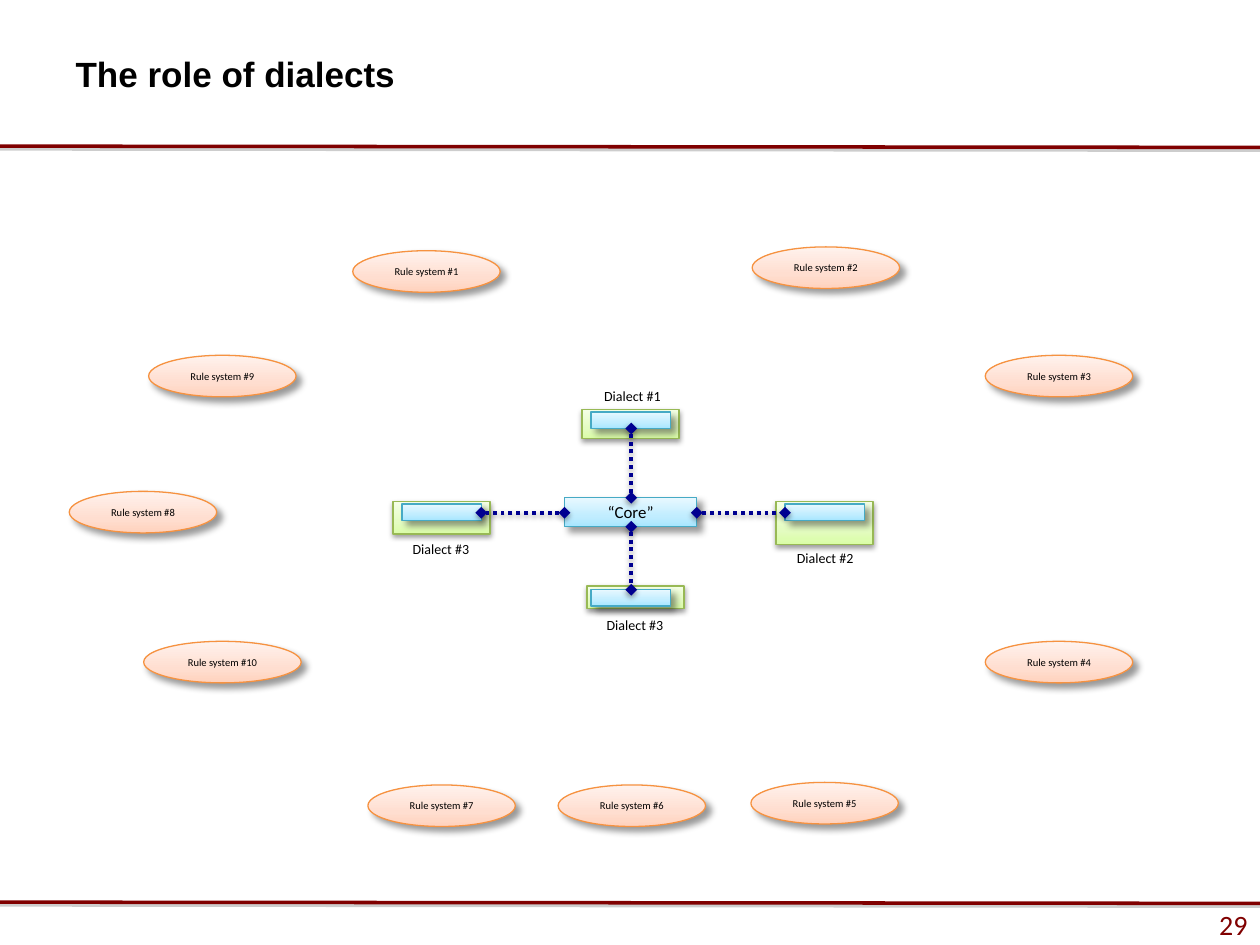
from copy import deepcopy
from dataclasses import dataclass

from lxml.etree import SubElement
from pptx import Presentation
from pptx.dml.color import RGBColor as RGB
from pptx.enum.dml import MSO_LINE
from pptx.enum.shapes import MSO_CONNECTOR as CONNECTOR, MSO_SHAPE as SHAPE
from pptx.enum.text import MSO_ANCHOR as ANCHOR, MSO_AUTO_SIZE as AUTO_SIZE, PP_ALIGN as ALIGN
from pptx.oxml.ns import qn
from pptx.util import Inches, Pt


@dataclass(frozen=True)
class Paint:
    stops: tuple
    outline: str
    shadow: tuple


@dataclass(frozen=True)
class Theme:
    heading_font: str = "Arial"
    body_font: str = "Calibri"
    black: str = "000000"
    white: str = "FFFFFF"
    rule: str = "800000"
    arrow: str = "000090"
    title_size: float = 20
    number_size: float = 16
    core_size: float = 9.6
    dialect_size: float = 8
    system_size: float = 6
    deep_shadow: tuple = ("000000", 40, 4, 4, 45)
    soft_shadow: tuple = ("000000", 38, 3.1, 1.6, 90)
    rule_shadow: tuple = ("808080", 38, 0, 1.6, 90)
    core: Paint = Paint(("A7E6FF", "C1EDFF", "E7F8FF"), "46AAC5", deep_shadow)
    dialect: Paint = Paint(("DAFDA7", "E4FCC2", "F5FFE7"), "98B955", soft_shadow)
    system: Paint = Paint(("FFD2BD", "FFDED0", "FFF2ED"), "F69240", deep_shadow)


THEME = Theme()
STOP_POSITIONS = (0, 0.35, 1)

CORE_BOX = (4.48, 3.95, 1.05, 0.23)
DIALECT_WIDTH = 0.77
INNER_SIZE = (0.63, 0.13)
LABEL_SIZE = (0.7, 0.23)
SYSTEM_HEIGHT = 0.33

DIALECTS = [
    ("Dialect #3", (4.66, 4.65), 0.18, (4.69, 4.68), (4.69, 4.84)),
    ("Dialect #2", (6.16, 3.98), 0.34, (6.23, 4), (6.2, 4.31)),
    ("Dialect #1", (4.62, 3.25), 0.23, (4.69, 3.27), (4.67, 3.03)),
    ("Dialect #3", (3.12, 3.98), 0.26, (3.19, 4), (3.15, 4.24)),
]
LINKS = [
    (5.53, 4.07, 6.23, 4.07),
    (5.01, 3.95, 5.01, 3.4),
    (5.01, 4.18, 5.01, 4.68),
    (4.48, 4.07, 3.82, 4.07),
]
RULE_SYSTEMS = [
    (1, 2.8, 1.99, 1.17),
    (2, 5.97, 1.96, 1.17),
    (3, 7.82, 2.82, 1.17),
    (4, 7.82, 5.09, 1.17),
    (5, 5.96, 6.21, 1.17),
    (6, 4.43, 6.23, 1.17),
    (7, 2.92, 6.23, 1.17),
    (8, 0.55, 3.9, 1.17),
    (9, 1.18, 2.82, 1.17),
    (10, 1.14, 5.09, 1.25),
]


def inches(values):
    return [Inches(value) for value in values]


def add_shadow(shape, shadow):
    color, alpha, blur, distance, angle = shadow
    effects = SubElement(shape.element.spPr, qn("a:effectLst"))
    outer = SubElement(effects, qn("a:outerShdw"), blurRad=str(Pt(blur)), dist=str(Pt(distance)),
                       dir=str(angle * 60000), rotWithShape="0")
    tint = SubElement(outer, qn("a:srgbClr"), val=color)
    SubElement(tint, qn("a:alpha"), val=str(alpha * 1000))


def write_text(shape, text, size, color=THEME.black, font=THEME.body_font,
               align=ALIGN.CENTER, bold=False):
    paragraph = shape.text_frame.paragraphs[0]
    paragraph.alignment = align
    run = paragraph.add_run()
    run.text = text
    run.font.name = font
    run.font.size = Pt(size)
    run.font.bold = bold
    run.font.color.rgb = RGB.from_string(color)


def add_painted(slide, kind, box, paint, text=None, size=None):
    shape = slide.shapes.add_shape(kind, *inches(box))
    shape.fill.gradient()
    shape.fill.gradient_angle = 90
    stop_list = shape.element.spPr.find(".//" + qn("a:gsLst"))
    stop_list.insert(1, deepcopy(stop_list[0]))
    for stop, position, color in zip(shape.fill.gradient_stops, STOP_POSITIONS, paint.stops):
        stop.position = position
        stop.color.rgb = RGB.from_string(color)
    shape.line.color.rgb = RGB.from_string(paint.outline)
    shape.line.width = Pt(0.75)
    add_shadow(shape, paint.shadow)
    if text:
        shape.text_frame.vertical_anchor = ANCHOR.MIDDLE
        write_text(shape, text, size)


def add_line(slide, ends, color, width, shadow):
    line = slide.shapes.add_connector(CONNECTOR.STRAIGHT, *inches(ends))
    line.line.color.rgb = RGB.from_string(color)
    line.line.width = Pt(width)
    add_shadow(line, shadow)
    return line


def add_link(slide, ends):
    link = add_line(slide, ends, THEME.arrow, 2.25, THEME.soft_shadow)
    link.line.dash_style = MSO_LINE.ROUND_DOT
    outline = link.element.spPr.find(qn("a:ln"))
    outline.find(qn("a:prstDash")).set("val", "sysDot")
    for end in ("a:headEnd", "a:tailEnd"):
        SubElement(outline, qn(end), type="diamond")


def add_label(slide, text, position):
    label = slide.shapes.add_textbox(*inches(position + LABEL_SIZE))
    label.text_frame.word_wrap = True
    label.text_frame.auto_size = AUTO_SIZE.SHAPE_TO_FIT_TEXT
    write_text(label, text, THEME.dialect_size)


def add_title(slide, text):
    title = slide.shapes.title
    title.left, title.top, title.width, title.height = inches((0.5, 0.33, 6.33, 0.5))
    title.text_frame.vertical_anchor = ANCHOR.MIDDLE
    write_text(title, text, THEME.title_size, font=THEME.heading_font, align=ALIGN.LEFT, bold=True)


def add_frame(slide, number):
    footer = slide.shapes.add_shape(SHAPE.RECTANGLE, *inches((0, 7.21, 10, 0.25)))
    footer.shadow.inherit = False
    footer.fill.solid()
    footer.fill.fore_color.rgb = RGB.from_string(THEME.white)
    footer.line.fill.background()
    footer.text_frame.vertical_anchor = ANCHOR.MIDDLE
    write_text(footer, number, THEME.number_size, THEME.rule, align=ALIGN.RIGHT)
    for top in (1.16, 7.16):
        add_line(slide, (0, top, 10, top + 0.01), THEME.rule, 2, THEME.rule_shadow)


def main():
    presentation = Presentation()
    presentation.slide_width, presentation.slide_height = Inches(10), Inches(7.5)
    slide = presentation.slides.add_slide(presentation.slide_layouts[5])
    add_frame(slide, "29")
    add_title(slide, "The role of dialects")
    add_painted(slide, SHAPE.RECTANGLE, CORE_BOX, THEME.core, "“Core”", THEME.core_size)
    for name, outer, height, inner, label in DIALECTS:
        add_painted(slide, SHAPE.RECTANGLE, outer + (DIALECT_WIDTH, height), THEME.dialect)
        add_painted(slide, SHAPE.RECTANGLE, inner + INNER_SIZE, THEME.core)
        add_label(slide, name, label)
    for ends in LINKS:
        add_link(slide, ends)
    for number, left, top, width in RULE_SYSTEMS:
        add_painted(slide, SHAPE.OVAL, (left, top, width, SYSTEM_HEIGHT), THEME.system,
                    f"Rule system #{number}", THEME.system_size)
    presentation.save("out.pptx")


if __name__ == "__main__":
    main()
